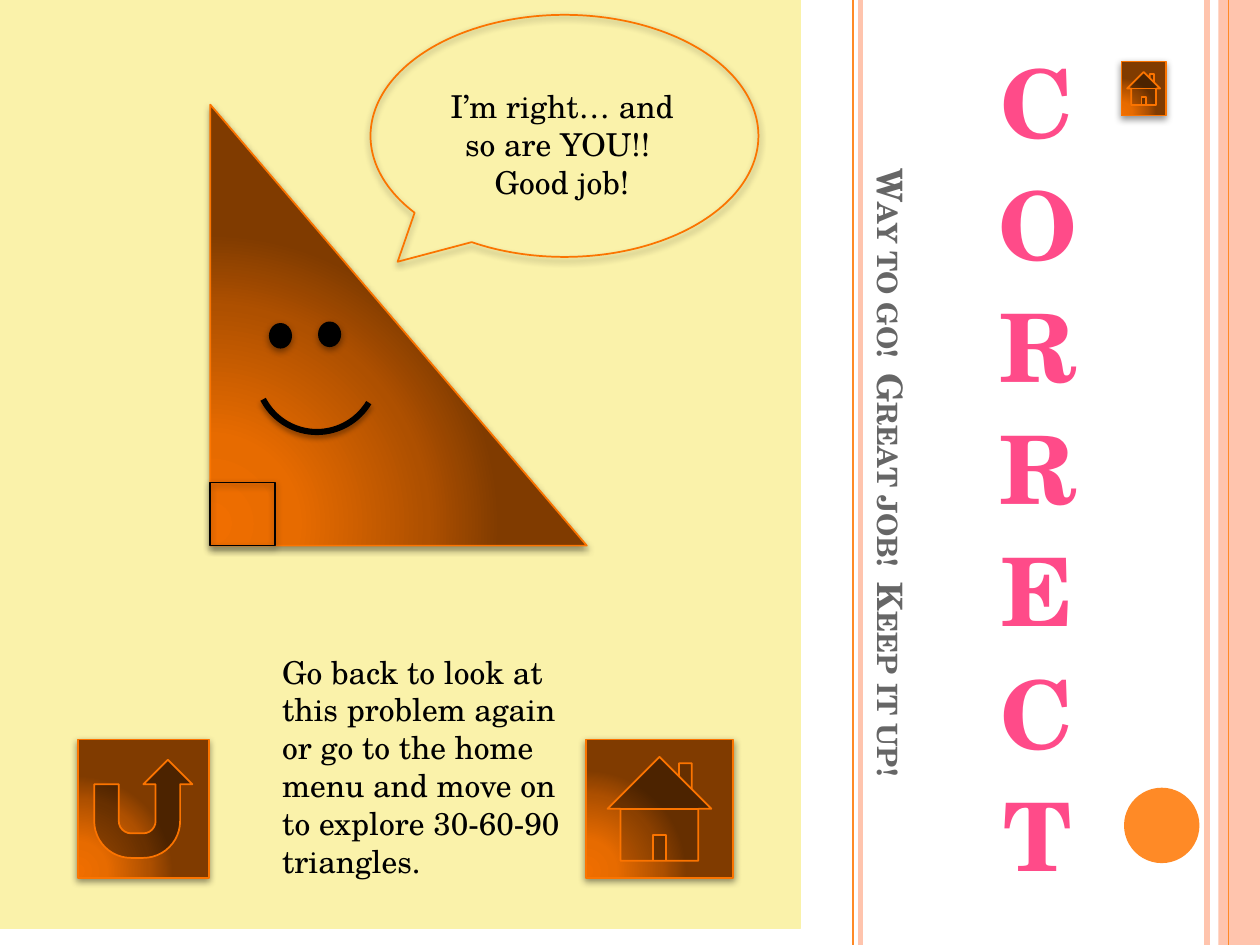
from dataclasses import dataclass
from typing import Optional

from lxml import etree
from pptx import Presentation
from pptx.dml.color import RGBColor
from pptx.enum.shapes import MSO_CONNECTOR, MSO_SHAPE
from pptx.enum.text import MSO_ANCHOR, PP_ALIGN
from pptx.oxml.ns import qn
from pptx.util import Cm, Pt

STRAIGHT = MSO_CONNECTOR.STRAIGHT
RECTANGLE, OVAL, ARC = MSO_SHAPE.RECTANGLE, MSO_SHAPE.OVAL, MSO_SHAPE.ARC
RIGHT_TRIANGLE, CALLOUT = MSO_SHAPE.RIGHT_TRIANGLE, MSO_SHAPE.OVAL_CALLOUT
HOME, RETURN = MSO_SHAPE.ACTION_BUTTON_HOME, MSO_SHAPE.ACTION_BUTTON_RETURN
LEFT, CENTER = PP_ALIGN.LEFT, PP_ALIGN.CENTER
TOP, BOTTOM = MSO_ANCHOR.TOP, MSO_ANCHOR.BOTTOM

FONT = "TeX Gyre Schola"
PEACH = RGBColor(0xFF, 0xC4, 0xAD)
ORANGE = RGBColor(0xFF, 0x8A, 0x26)
OUTLINE = RGBColor(0xFB, 0x74, 0x00)
CREAM = RGBColor(0xFA, 0xF2, 0xAA)
PINK = RGBColor(0xFF, 0x4B, 0x89)
GREY = RGBColor(0x66, 0x66, 0x66)
BLACK = RGBColor(0, 0, 0)
GLOW = ((0, "F06E00"), (30, "E76B00"), (75, "AE5000"), (100, "803B00"))
GLOW_CENTER = {"l": "5000", "t": "100000", "r": "120000", "b": "10000"}

SLIDE_WIDTH, SLIDE_HEIGHT = 25.4, 19.05


@dataclass(frozen=True)
class Box:
    left: float
    top: float
    width: float
    height: float

    def lengths(self) -> tuple:
        return Cm(self.left), Cm(self.top), Cm(self.width), Cm(self.height)


@dataclass(frozen=True)
class Shadow:
    opacity: int
    blur: float
    distance: float


SOFT = Shadow(42, 4, 1.6)
MOUTH_SHADOW = Shadow(35, 3, 2)


@dataclass(frozen=True)
class Figure:
    preset: int
    box: Box
    fill: Optional[RGBColor] = None
    glow: bool = False
    line: Optional[RGBColor] = None
    weight: float = 1
    shadow: Optional[Shadow] = None
    adjustments: tuple = ()


@dataclass(frozen=True)
class Stripe:
    x: float
    color: RGBColor
    weight: float


@dataclass(frozen=True)
class Caption:
    text: str
    box: Box
    size: float
    color: RGBColor = BLACK
    align: int = LEFT
    anchor: int = TOP
    bold: bool = False
    small_caps: bool = False
    rotation: float = 0
    before: float = 0
    after: float = 0


def add_color(parent, value: str):
    return etree.SubElement(parent, qn("a:srgbClr"), val=value)


def apply_glow(shape) -> None:
    shape.fill.gradient()
    gradient = shape._element.spPr.find(qn("a:gradFill"))
    gradient.clear()
    gradient.set("rotWithShape", "1")
    stops = etree.SubElement(gradient, qn("a:gsLst"))
    for position, value in GLOW:
        add_color(etree.SubElement(stops, qn("a:gs"), pos=str(position * 1000)), value)
    circle = etree.SubElement(gradient, qn("a:path"), {"path": "circle"})
    etree.SubElement(circle, qn("a:fillToRect"), GLOW_CENTER)


def apply_shadow(shape, shadow: Shadow) -> None:
    effects = shape._element.spPr.find(qn("a:effectLst"))
    outer = etree.SubElement(
        effects, qn("a:outerShdw"), blurRad=str(Pt(shadow.blur)),
        dist=str(Pt(shadow.distance)), dir="5400000", rotWithShape="0")
    etree.SubElement(add_color(outer, str(BLACK)), qn("a:alpha"),
                     val=str(shadow.opacity * 1000))


def draw_figure(slide, figure: Figure) -> None:
    shape = slide.shapes.add_shape(figure.preset, *figure.box.lengths())
    shape.shadow.inherit = False
    for index, value in enumerate(figure.adjustments):
        shape.adjustments[index] = value
    if figure.glow:
        apply_glow(shape)
    elif figure.fill is None:
        shape.fill.background()
    else:
        shape.fill.solid()
        shape.fill.fore_color.rgb = figure.fill
    if figure.line is None:
        shape.line.fill.background()
    else:
        shape.line.color.rgb = figure.line
        shape.line.width = Pt(figure.weight)
    if figure.shadow:
        apply_shadow(shape, figure.shadow)


def draw_stripe(slide, stripe: Stripe) -> None:
    line = slide.shapes.add_connector(
        STRAIGHT, Cm(stripe.x), Cm(0), Cm(stripe.x), Cm(SLIDE_HEIGHT))
    line.line.color.rgb = stripe.color
    line.line.width = Pt(stripe.weight)
    etree.SubElement(line._element.spPr, qn("a:effectLst"))


def draw_caption(slide, caption: Caption) -> None:
    holder = slide.shapes.add_textbox(*caption.box.lengths())
    holder.rotation = caption.rotation
    frame = holder.text_frame
    frame.word_wrap = True
    frame.vertical_anchor = caption.anchor
    frame.text = caption.text
    for paragraph in frame.paragraphs:
        paragraph.alignment = caption.align
        paragraph.space_before = Pt(caption.before)
        paragraph.space_after = Pt(caption.after)
        for run in paragraph.runs:
            run.font.name = FONT
            run.font.size = Pt(caption.size)
            run.font.bold = caption.bold
            run.font.color.rgb = caption.color
            if caption.small_caps:
                run._r.get_or_add_rPr().set("cap", "small")


def glowing(preset: int, box: Box) -> Figure:
    return Figure(preset, box, glow=True, line=OUTLINE, shadow=SOFT)


def eye(left: float, top: float) -> Figure:
    return Figure(OVAL, Box(left, top, 0.43, 0.48), fill=BLACK, line=BLACK, shadow=SOFT)


PARTS = (
    Stripe(24.33, PEACH, 3),
    Figure(OVAL, Box(22.66, 15.88, 1.52, 1.52), fill=ORANGE),
    Figure(RECTANGLE, Box(24.56, 0, 0.84, SLIDE_HEIGHT), fill=PEACH),
    Stripe(24.77, ORANGE, 0.75),
    Stripe(17.35, PEACH, 3),
    Stripe(17.2, ORANGE, 1),
    Caption("Way to go!  Great job!  Keep it up!", Box(9.3, 8.89, 17.53, 1.27), 20,
            GREY, CENTER, BOTTOM, bold=True, small_caps=True, rotation=90),
    Caption("\n".join("CORRECT"), Box(18.8, 0.76, 4.24, 13.74), 54,
            PINK, CENTER, bold=True, before=1, after=4),
    Figure(RECTANGLE, Box(0, 0, 16.13, 18.72), fill=CREAM, line=CREAM, weight=0.75),
    Caption("I’m right… and so are YOU!!  Good job!", Box(8.46, 1.63, 5.74, 2.57), 18,
            align=CENTER),
    glowing(RIGHT_TRIANGLE, Box(4.24, 2.11, 7.59, 8.89)),
    Figure(CALLOUT, Box(7.47, 0.3, 7.82, 4.88), line=OUTLINE, shadow=SOFT,
           adjustments=(-0.43, 0.52)),
    Figure(RECTANGLE, Box(4.24, 9.73, 1.3, 1.27), line=BLACK, shadow=SOFT),
    Figure(ARC, Box(5.17, 6.27, 2.44, 2.44), line=BLACK, weight=3.5,
           shadow=MOUTH_SHADOW, adjustments=(18.6, 91.6)),
    eye(5.44, 6.53),
    eye(6.43, 6.5),
    glowing(HOME, Box(22.61, 1.24, 0.89, 1.09)),
    glowing(RETURN, Box(1.57, 14.91, 2.64, 2.79)),
    glowing(HOME, Box(11.81, 14.91, 2.97, 2.79)),
    Caption("Go back to look at this problem again or go to the home menu and move on "
            "to explore 30-60-90 triangles.", Box(5.44, 13.03, 6.38, 4.88), 18),
)

PAINTERS = {Stripe: draw_stripe, Figure: draw_figure, Caption: draw_caption}


def main() -> None:
    deck = Presentation()
    deck.slide_width, deck.slide_height = Cm(SLIDE_WIDTH), Cm(SLIDE_HEIGHT)
    slide = deck.slides.add_slide(deck.slide_layouts[6])
    for part in PARTS:
        PAINTERS[type(part)](slide, part)
    deck.save("out.pptx")


if __name__ == "__main__":
    main()
